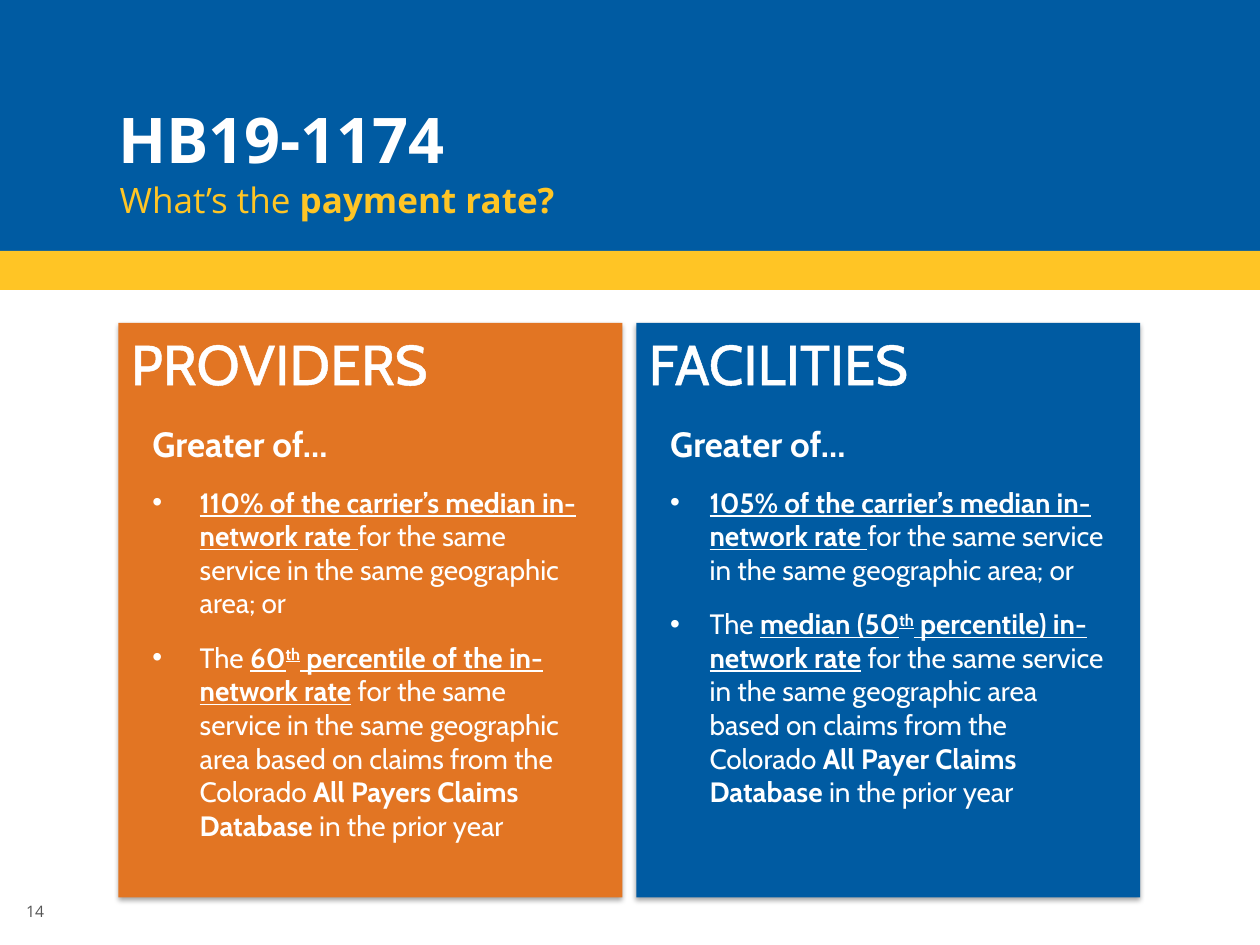
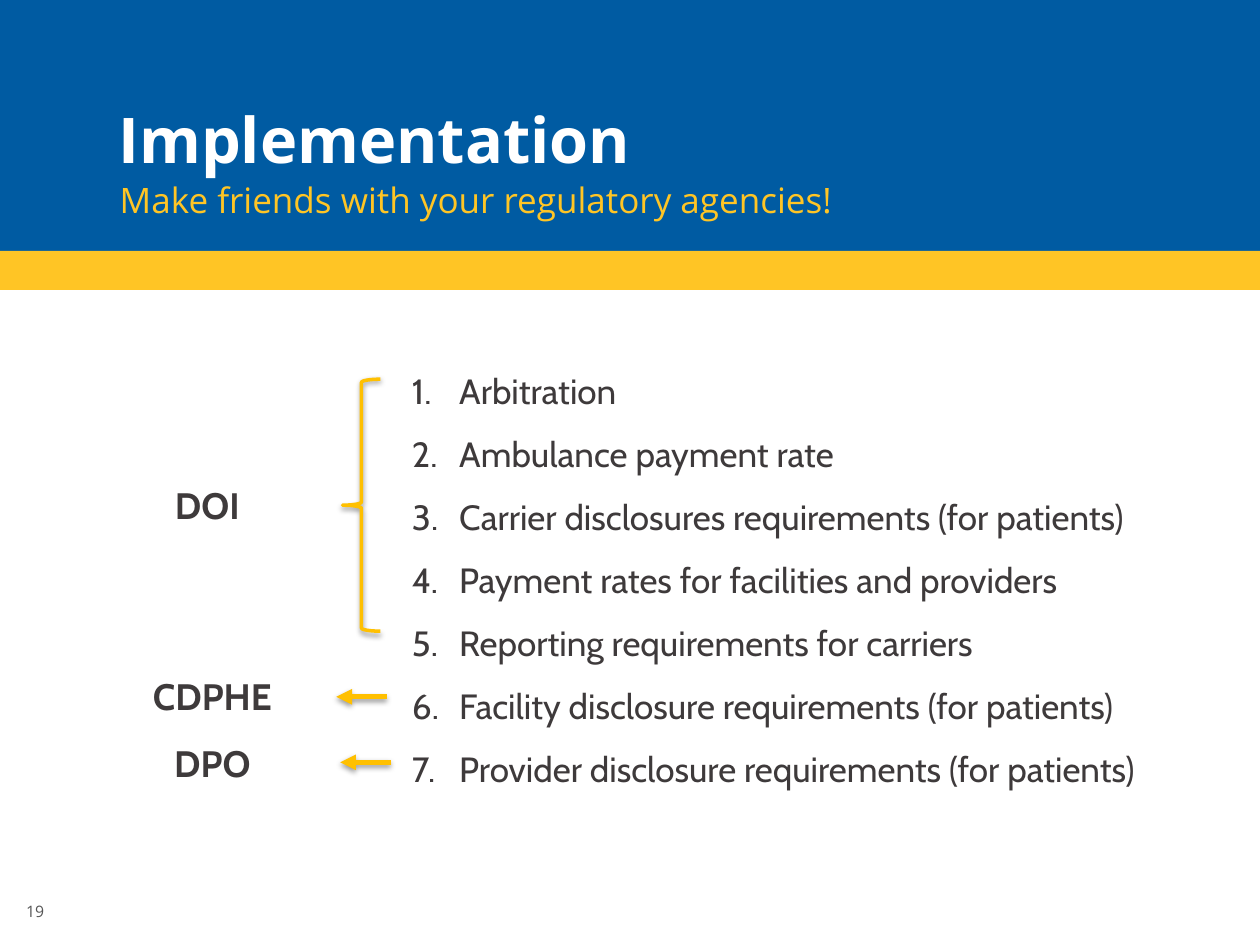
from dataclasses import dataclass

from lxml import etree
from pptx import Presentation
from pptx.dml.color import RGBColor
from pptx.enum import shapes, text
from pptx.oxml import ns
from pptx.util import Pt


@dataclass(frozen=True)
class Theme:
    blue: str = "005BA2"
    yellow: str = "FFC525"
    gold: str = "FFC000"
    orange: str = "E27523"
    white: str = "FFFFFF"
    ink: str = "3E3A3B"
    gray: str = "555555"
    heading_font: str = "Open Sans"
    body_font: str = "Cabin"
    title: int = 36
    card: int = 32
    label: int = 21
    lead: int = 20
    detail: int = 16
    number: int = 9


THEME = Theme()

# Content: a run is (text, flags), with b bold, u underlined, s superscript
RATE = {
    "title": "HB19-1174",
    "subtitle": [("What’s the ", ""), ("payment rate?", "b")],
    "number": "14",
}
LEAD = "Greater of…"
RATE_CARDS = [
    ("PROVIDERS", THEME.orange, 27, [
        [("110% of the carrier’s median in-network rate ", "bu"),
         ("for the same service in the same geographic area; or", "")],
        [("The ", ""), ("60", "bu"), ("th", "bus"),
         (" percentile of the in-network rate", "bu"),
         (" for the same service in the same geographic area based on claims from the Colorado ", ""),
         ("All Payers Claims Database ", "b"), ("in the prior year", "")],
    ]),
    ("FACILITIES", THEME.blue, 22.5, [
        [("105% of the carrier’s median in-network rate ", "bu"),
         ("for the same service in the same geographic area; or", "")],
        [("The ", ""), ("median (50", "bu"), ("th", "bus"),
         (" percentile) in-network rate", "bu"),
         (" for the same service in the same geographic area based on claims from the Colorado ", ""),
         ("All Payer Claims Database ", "b"), ("in the prior year", "")],
    ]),
]
IMPLEMENTATION = {
    "title": "Implementation",
    "subtitle": [("Make friends with your regulatory agencies!", "")],
    "number": "19",
}
DUTIES = [
    "Arbitration",
    "Ambulance payment rate",
    "Carrier disclosures requirements (for patients)",
    "Payment rates for facilities and providers",
    "Reporting requirements for carriers",
    "Facility disclosure requirements (for patients)",
    "Provider disclosure requirements (for patients)",
]
AGENCIES = [("DOI", 64.8, 272.2), ("CDPHE", 67.7, 381.6), ("DPO", 67.7, 419.8)]
ARROWS = [(221, 398.2), (223.2, 435.6)]  # right end and height

# Geometry in points
BANDS = [((0, 0, 720, 146.9), THEME.blue), ((0, 143.3, 720, 22.3), THEME.yellow)]
CARD_LEFT, CARD_TOP, CARD_WIDTH, CARD_HEIGHT, CARD_STEP = 67.7, 184.5, 288, 328.3, 295.9
LIST_INSET, LIST_TOP, LIST_WIDTH, LIST_HEIGHT = 12.2, 237.6, 263.5, 275


# Shared helpers
def add_xml(parent, tag, **attributes):
    return etree.SubElement(parent, ns.qn(tag), attributes)


def place(shape, box):
    shape.left, shape.top, shape.width, shape.height = map(Pt, box)


def prepare(shape, box, margin=None, anchor=text.MSO_ANCHOR.TOP):
    place(shape, box)
    frame = shape.text_frame
    frame.word_wrap, frame.auto_size = True, text.MSO_AUTO_SIZE.NONE
    frame.vertical_anchor = anchor
    if margin is not None:
        frame.margin_left = frame.margin_right = Pt(margin)
        frame.margin_top = frame.margin_bottom = Pt(margin)
    return frame


def format_run(run, size, color, font, flags=""):
    run.font.size, run.font.name = Pt(size), font
    run.font.color.rgb = RGBColor.from_string(color)
    run.font.bold, run.font.underline = "b" in flags, "u" in flags
    if "s" in flags:
        run.font._element.set("baseline", "30000")


def write(paragraph, runs, size, color, font, align=text.PP_ALIGN.LEFT, before=0, spacing=1.0):
    paragraph.alignment = align
    paragraph.space_before, paragraph.line_spacing = Pt(before), spacing
    for words, flags in runs:
        run = paragraph.add_run()
        run.text = words
        format_run(run, size, color, font, flags)


def set_bullet(paragraph, indent=0, tag="a:buNone", **attributes):
    properties = paragraph._p.get_or_add_pPr()
    properties.set("marL", str(Pt(indent)))
    properties.set("indent", str(-Pt(indent)))
    if tag == "a:buChar":
        add_xml(properties, "a:buFont", typeface="Arial")
    add_xml(properties, tag, **attributes)


def add_shadow(shape, distance, opacity):
    effects = add_xml(shape._element.spPr, "a:effectLst")
    shadow = add_xml(effects, "a:outerShdw", blurRad=str(Pt(3.1)), dist=str(Pt(distance)),
                     dir="5400000", rotWithShape="0")
    add_xml(add_xml(shadow, "a:srgbClr", val="000000"), "a:alpha", val=str(opacity * 1000))


def add_rectangle(slide, box, color):
    """Add a filled rectangle behind the placeholders."""
    shape = slide.shapes.add_shape(shapes.MSO_SHAPE.RECTANGLE, *map(Pt, box))
    shape.fill.solid()
    shape.fill.fore_color.rgb = RGBColor.from_string(color)
    shape.line.fill.background()
    slide.shapes.title._element.addprevious(shape._element)
    return shape


def set_line(shape, width):
    shape.line.color.rgb = RGBColor.from_string(THEME.gold)
    shape.line.width = Pt(width)


def add_text(slide, box, words, size, color, font, flags="", align=text.PP_ALIGN.LEFT):
    frame = prepare(slide.shapes.add_textbox(0, 0, 0, 0), box)
    write(frame.paragraphs[0], [(words, flags)], size, color, font, align)
    return frame


def start_slide(presentation, content):
    """Add a slide with its bands, title, subtitle and page number."""
    slide = presentation.slides.add_slide(presentation.slide_layouts.get_by_name("Comparison"))
    for box, color in BANDS:
        add_rectangle(slide, box, color).shadow.inherit = False
    frame = prepare(slide.shapes.title, (67.7, 2.2, 581.8, 98.6), 0, text.MSO_ANCHOR.BOTTOM)
    write(frame.paragraphs[0], [(content["title"], "b")], THEME.title, THEME.white,
          THEME.heading_font, spacing=Pt(35.2))
    frame = prepare(slide.placeholders[1], (68.4, 102.2, 581, 43.9), 0)
    set_bullet(frame.paragraphs[0])
    write(frame.paragraphs[0], content["subtitle"], THEME.lead, THEME.yellow, THEME.heading_font)
    frame = add_text(slide, (7.9, 511.9, 26.6, 18), content["number"], THEME.number, THEME.gray,
                     THEME.heading_font)
    frame.word_wrap = False
    return slide


def remove_empty_placeholders(slide):
    for placeholder in list(slide.placeholders):
        if not placeholder.text_frame.text:
            placeholder._element.getparent().remove(placeholder._element)


# Slide with the two payment rate cards
def build_rate_slide(presentation):
    slide = start_slide(presentation, RATE)
    for index, (heading, color, indent, items) in enumerate(RATE_CARDS):
        left = CARD_LEFT + index * CARD_STEP
        box = (left, CARD_TOP, CARD_WIDTH, CARD_HEIGHT)
        card = add_rectangle(slide, box, color)
        add_shadow(card, 1.8, 35)
        paragraph = prepare(card, box).paragraphs[0]
        write(paragraph, [(heading, "")], THEME.card, THEME.white, THEME.body_font)
        outline = etree.Element(ns.qn("a:ln"), w=str(Pt(0.75)))
        add_xml(add_xml(outline, "a:solidFill"), "a:srgbClr", val=THEME.white)
        paragraph.runs[0].font._element.insert(0, outline)

        frame = prepare(slide.placeholders[2 + 2 * index],
                        (left + LIST_INSET, LIST_TOP, LIST_WIDTH, LIST_HEIGHT))
        set_bullet(frame.paragraphs[0])
        write(frame.paragraphs[0], [(LEAD, "b")], THEME.lead, THEME.white, THEME.body_font)
        for runs in items:
            paragraph = frame.add_paragraph()
            set_bullet(paragraph, indent, "a:buChar", char="•")
            write(paragraph, runs, THEME.detail, THEME.white, THEME.body_font, before=12)
    remove_empty_placeholders(slide)


# Slide with the duties and the agencies in charge
def build_implementation_slide(presentation):
    slide = start_slide(presentation, IMPLEMENTATION)
    frame = prepare(slide.placeholders[2], (228.2, 195.8, 466.6, 257))
    frame.text = "\n".join(DUTIES)
    for paragraph in frame.paragraphs:
        set_bullet(paragraph, 27, "a:buAutoNum", type="arabicPeriod")
        paragraph.space_before, paragraph.line_spacing = Pt(0), 1.5
        format_run(paragraph.runs[0], THEME.lead, THEME.ink, THEME.body_font)

    brace = slide.shapes.add_shape(shapes.MSO_SHAPE.LEFT_BRACE, *map(Pt, (195.8, 216.7, 21.6, 144)))
    brace.fill.background()
    set_line(brace, 2)
    add_shadow(brace, 1.6, 38)
    for right, height in ARROWS:
        arrow = slide.shapes.add_connector(shapes.MSO_CONNECTOR.STRAIGHT, Pt(right), Pt(height),
                                           Pt(right - 28.8), Pt(height))
        set_line(arrow, 3)
        add_xml(arrow.line._get_or_add_ln(), "a:tailEnd", type="triangle")
        add_shadow(arrow, 1.6, 38)
    for agency, left, top in AGENCIES:
        add_text(slide, (left, top, 107.3, 32.4), agency, THEME.label, THEME.ink,
                 THEME.body_font, "b", text.PP_ALIGN.CENTER)
    remove_empty_placeholders(slide)


def main():
    presentation = Presentation()
    presentation.slide_width, presentation.slide_height = Pt(720), Pt(540)
    build_rate_slide(presentation)
    build_implementation_slide(presentation)
    presentation.save("out.pptx")


if __name__ == "__main__":
    main()
